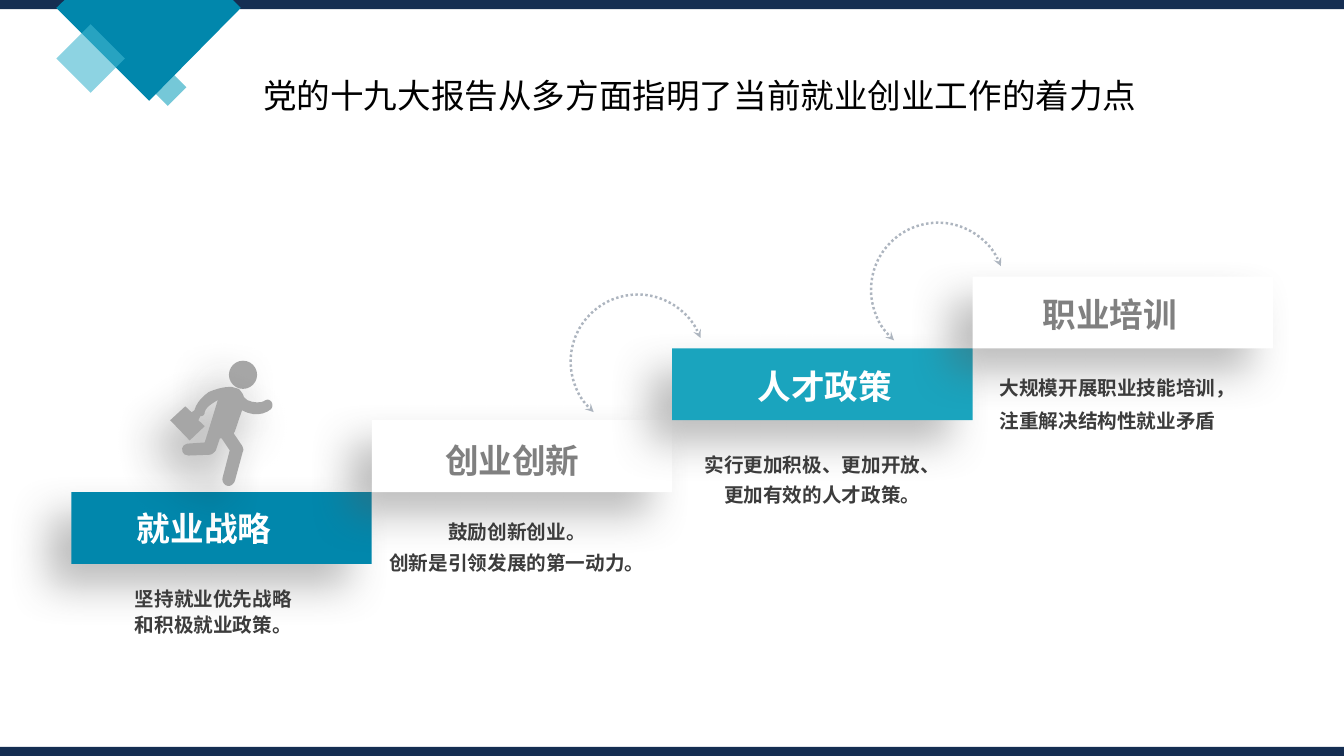
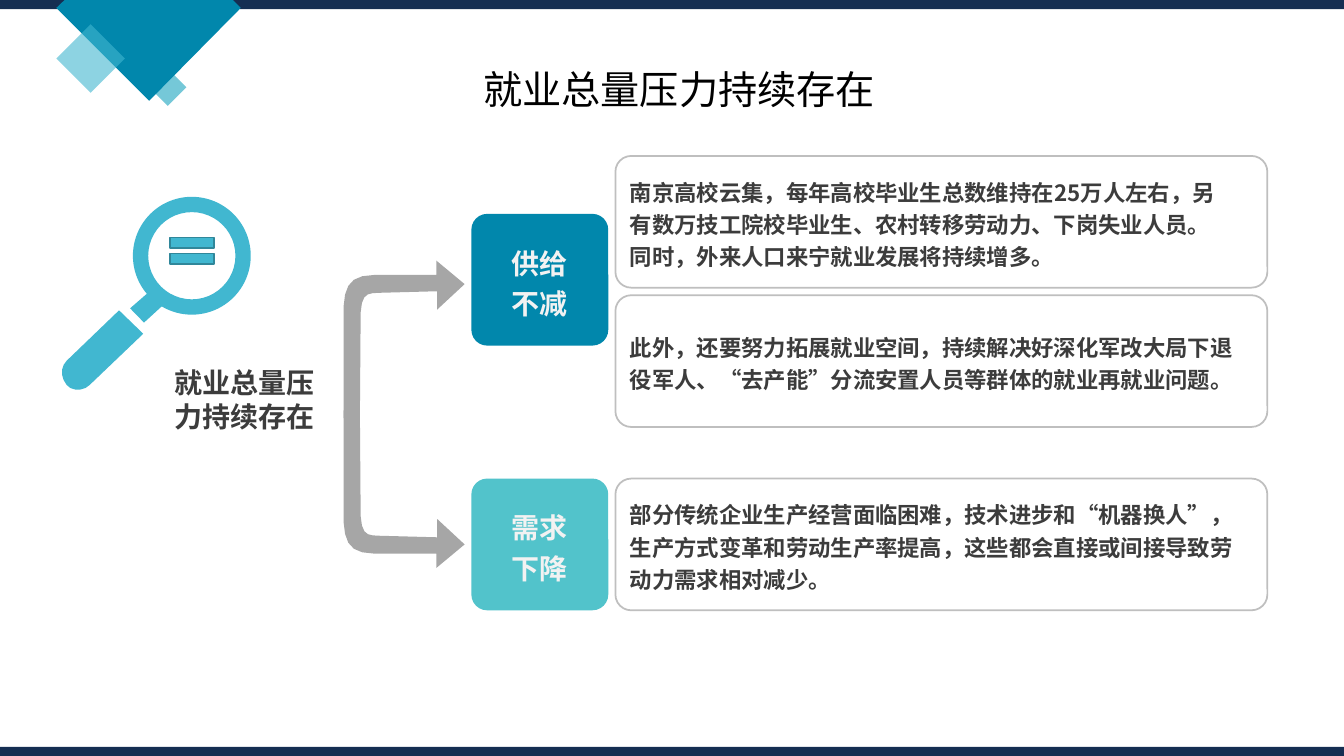
"""Build two slides on employment and entrepreneurship."""
from lxml.etree import SubElement
from pptx import Presentation
from pptx.dml.color import RGBColor
from pptx.enum.dml import MSO_LINE
from pptx.enum.shapes import MSO_SHAPE
from pptx.enum.text import MSO_ANCHOR, PP_ALIGN
from pptx.oxml.ns import qn
from pptx.util import Cm, Pt

HUES = {
    "navy": "152E52", "blue": "0187AC", "teal": "1AA4BE", "sky": "41B7D0",
    "mint": "52C3CB", "edge": "30879A", "white": "FFFFFF", "pale": "F2F2F2",
    "grey": "A6A6A6", "mid": "808080", "rule": "BFBFBF", "dots": "ADB5BF",
    "text": "3C3C3C", "black": "000000", "shade": "595959", "dark": "262626",
}
FACE = "Noto Sans CJK SC"
LEFT, MID = PP_ALIGN.LEFT, PP_ALIGN.CENTER
TOP, HALF = MSO_ANCHOR.TOP, MSO_ANCHOR.MIDDLE
RECT, ROUND = MSO_SHAPE.RECTANGLE, MSO_SHAPE.ROUNDED_RECTANGLE
WIDTH, HEIGHT, BAND = 33.87, 19.05, 0.23
UNIT = 1000


def write(host, text, size=14, hue="text", bold=True, font=FACE,
          align=LEFT, space=1.0, anchor=TOP):
    frame = host.text_frame
    frame.word_wrap = True
    frame.vertical_anchor = anchor
    for num, line in enumerate(text.split("\n")):
        para = frame.add_paragraph() if num else frame.paragraphs[0]
        para.alignment = align
        para.line_spacing = space
        run = para.add_run()
        run.text = line
        run.font.size = Pt(size)
        run.font.bold = bold
        run.font.name = font
        run.font.color.rgb = RGBColor.from_string(HUES[hue])
        SubElement(run.font._element, qn("a:ea"), typeface=FACE)


def draw(page, form, box=None, fill=None, line=None, width=1.25,
         alpha=None, glow=None, adj=()):
    if box:
        shape = page.shapes.add_shape(form, *map(Cm, box))
    else:
        first, *rest = [(x * UNIT, y * UNIT) for x, y in form]
        pen = page.shapes.build_freeform(*first, scale=Cm(1) / UNIT)
        pen.add_line_segments(rest, close=True)
        shape = pen.convert_to_shape()
    for num, val in enumerate(adj):
        shape.adjustments[num] = val
    shape.shadow.inherit = False
    props = shape._element.spPr
    if fill:
        shape.fill.solid()
        shape.fill.fore_color.rgb = RGBColor.from_string(HUES[fill])
    else:
        shape.fill.background()
    if line:
        shape.line.color.rgb = RGBColor.from_string(HUES[line])
        shape.line.width = Pt(width)
    else:
        shape.line.fill.background()
    if alpha:
        SubElement(props.find(qn("a:solidFill"))[0], qn("a:alpha"), val=str(alpha * 1000))
    if glow:
        hue, blur, dist = glow
        cast = SubElement(props.find(qn("a:effectLst")), qn("a:outerShdw"),
                          blurRad=str(Pt(blur)), dist=str(Pt(dist)),
                          dir="8100000", algn="tr", rotWithShape="0")
        tint = SubElement(cast, qn("a:srgbClr"), val=HUES[hue])
        SubElement(tint, qn("a:alpha"), val="40000")
    return shape


deck = Presentation()
deck.slide_width, deck.slide_height = Cm(WIDTH), Cm(HEIGHT)

heads = [
    ("党的十九大报告从多方面指明了当前就业创业工作的着力点",
     (6.38, 0.76, 22.78, 3.4), 24, LEFT),
    ("就业总量压力持续存在", (2.51, 1.04, 29.21, 2.54), 28, MID),
]
flag = [(1.63, 0), (5.87, 0), (6.07, 0.2), (3.76, 2.54), (1.42, 0.2)]
pages = []
for text, box, size, align in heads:
    page = deck.slides.add_slide(deck.slide_layouts[6])
    for top in (0, HEIGHT - BAND):
        draw(page, RECT, (0, top, WIDTH, BAND), "navy")
    draw(page, MSO_SHAPE.DIAMOND, (3.76, 1.73, 0.94, 0.94), "teal", alpha=60)
    draw(page, flag, fill="blue")
    draw(page, MSO_SHAPE.DIAMOND, (1.42, 0.61, 1.73, 1.73), "sky", alpha=60)
    write(page.shapes.add_textbox(*map(Cm, box)), text, size=size, hue="black",
          bold=False, font="Arial", align=align, space=0.9, anchor=HALF)
    pages.append(page)
stairs, press = pages

bag = [(4.9, 10.34), (4.83, 10.39), (4.67, 10.24), (4.29, 10.59), (4.78, 11.1),
       (5.16, 10.74), (5, 10.59), (5.05, 10.49)]
back_arm = [(5.11, 10.49, 5.16, 10.46, 5.16, 10.39),
            (5.18, 10.29, 5.28, 10.21, 5.41, 10.13), (5.49, 10.08)]
back_leg = [(5.31, 10.67), (5.16, 11.15), (4.72, 11.18),
            (4.54, 11.2, 4.54, 11.48, 4.75, 11.48), (5.28, 11.46),
            (5.33, 11.46, 5.41, 11.4, 5.44, 11.35), (5.54, 11.05), (5.59, 11.05)]
front_leg = [(5.79, 11.35), (5.61, 12.04), (5.59, 12.12, 5.64, 12.22, 5.72, 12.24),
             (5.82, 12.27, 5.89, 12.19, 5.92, 12.12), (6.12, 11.38),
             (6.15, 11.33, 6.12, 11.28, 6.1, 11.23), (5.89, 10.92), (5.92, 10.87)]
front_arm = [(6.1, 10.34), (6.15, 10.36, 6.2, 10.39, 6.27, 10.41),
             (6.45, 10.47, 6.68, 10.44, 6.83, 10.31),
             (6.88, 10.26, 6.88, 10.16, 6.83, 10.11),
             (6.78, 10.06, 6.71, 10.06, 6.65, 10.11),
             (6.58, 10.16, 6.25, 10.16, 6.15, 10.01)]
back = [(6.12, 9.91, 6.07, 9.86, 6.02, 9.8), (5.84, 9.75), (5.79, 9.75),
        (5.64, 9.75, 5.44, 9.8, 5.26, 9.88), (5.08, 10.01, 4.95, 10.16, 4.9, 10.34)]

AXIS = 10.44
bend = [(9.07, -0.1), (9.09, 2.57), (9.12, 3.05, 9.27, 3.05, 9.53, 3.06),
        (11.02, 3.1), (11.02, 2.64), (11.71, 3.28), (11, 3.87), (11, 3.51),
        (9.42, 3.51), (8.86, 3.5, 8.69, 3.28, 8.66, 2.72), (8.66, -0.1)]
paths = {
    "runner": bag + back_arm + back_leg + front_leg + front_arm + back,
    "bend": bend,
    "grip": [(3, 7.82), (1.68, 9.09), (1.52, 9.25, 1.52, 9.5, 1.68, 9.7),
             (1.8, 9.86, 2.11, 9.86, 2.26, 9.7), (3.61, 8.41)],
    "neck": [(4.22, 7.59), (3.63, 8.13), (3.28, 7.77), (3.89, 7.24)],
}
for name, path in paths.items():
    dots = []
    for step in path:
        if len(step) == 2:
            dots.append(step)
            continue
        ends = dots[-1] + step
        for t in (0.2, 0.4, 0.6, 0.8, 1):
            s = 1 - t
            mix = (s ** 3, 3 * s * s * t, 3 * s * t * t, t ** 3)
            dots.append((sum(m * x for m, x in zip(mix, ends[0::2])),
                         sum(m * y for m, y in zip(mix, ends[1::2]))))
    paths[name] = dots

START, BASE, WIDE, RISE = 1.8, 12.4, 7.57, 1.81
steps = [
    ("就业战略", "blue", "white", (1.4, 0.27),
     "坚持就业优先战略\n和积极就业政策。", (0, 0.4), 7.16, MID, 1.1),
    ("创业创新", "white", "mid", (1.6, 0.38),
     "鼓励创新创业。\n创新是引领发展的第一动力。", (0, 0.4), 7.32, MID, 1.3),
    ("人才政策", "teal", "white", (1.9, 0.31),
     "实行更加积极、更加开放、\n更加有效的人才政策。", (0, 0.51), 7.57, MID, 1.3),
    ("职业培训", "white", "mid", (1.52, 0.31),
     "大规模开展职业技能培训，注重解决结构性就业矛盾", (0.43, 0.34), 6.73, LEFT, 1.4),
]
for num, (name, fill, hue, shift, note, gap, span, align, space) in enumerate(steps):
    left, top = START + num * WIDE, BASE - num * RISE
    draw(stairs, RECT, (left, top, WIDE, RISE), fill, glow=("shade", 30, 23))
    spot = (left + shift[0], top + shift[1], 5, 1.27)
    write(stairs.shapes.add_textbox(*map(Cm, spot)), name, size=24, hue=hue, font="Arial")
    area = (left + gap[0], top + RISE + gap[1], span, 1.8)
    write(stairs.shapes.add_textbox(*map(Cm, area)), note, align=align, space=space)

for num in (1, 2):
    left, top = START + num * WIDE + 5.01, BASE - num * RISE - 3.17
    arc = draw(stairs, MSO_SHAPE.ARC, (left, top, 3.38, 3.38),
               line="dots", width=1.75, adj=(162, 70.97))
    arc.rotation = 221.1
    arc.line.dash_style = MSO_LINE.ROUND_DOT
    for end in ("a:headEnd", "a:tailEnd"):
        SubElement(arc._element.spPr.find(qn("a:ln")), qn(end), type="stealth")

for form, box in ((MSO_SHAPE.OVAL, (5.77, 9.09, 0.71, 0.71)), (paths["runner"], None)):
    draw(stairs, form, box, "grey", glow=("dark", 33, 20))

for side in (1, -1):
    draw(press, [(x, AXIS + side * y) for x, y in paths["bend"]], fill="grey")
for part in ("grip", "neck"):
    draw(press, paths[part], fill="sky")
draw(press, MSO_SHAPE.DONUT, (3.35, 4.96, 2.97, 2.97), "sky", adj=(0.13,))
draw(press, MSO_SHAPE.MATH_EQUAL, (4.08, 5.76, 1.52, 1.12), "sky", "edge", 1)
write(press.shapes.add_textbox(Cm(4.14), Cm(9.09), Cm(4.3), Cm(1.96)),
      "就业总量压\n力持续存在", size=20)

TALL = 3.32
cards = [
    (3.93, "南京高校云集，每年高校毕业生总数维持在25万人左右，另\n"
     "有数万技工院校毕业生、农村转移劳动力、下岗失业人员。\n"
     "同时，外来人口来宁就业发展将持续增多。"),
    (7.44, "此外，还要努力拓展就业空间，持续解决好深化军改大局下退役军人、"
     "“去产能”分流安置人员等群体的就业再就业问题。"),
    (12.06, "部分传统企业生产经营面临困难，技术进步和“机器换人”，"
     "生产方式变革和劳动生产率提高，这些都会直接或间接导致劳动力需求相对减少。"),
]
for top, text in cards:
    card = draw(press, ROUND, (15.51, top, 16.43, TALL), line="rule", adj=(0.12,))
    write(card, text, size=16, space=1.2, anchor=HALF)

tags = [(5.39, "供给\n不减", "blue"), (12.06, "需求\n下降", "mint")]
for top, text, fill in tags:
    tag = draw(press, ROUND, (11.88, top, 3.45, TALL), fill, adj=(0.12,))
    write(tag, text, size=20, hue="pale", align=MID, space=1.2, anchor=HALF)

deck.save("out.pptx")
